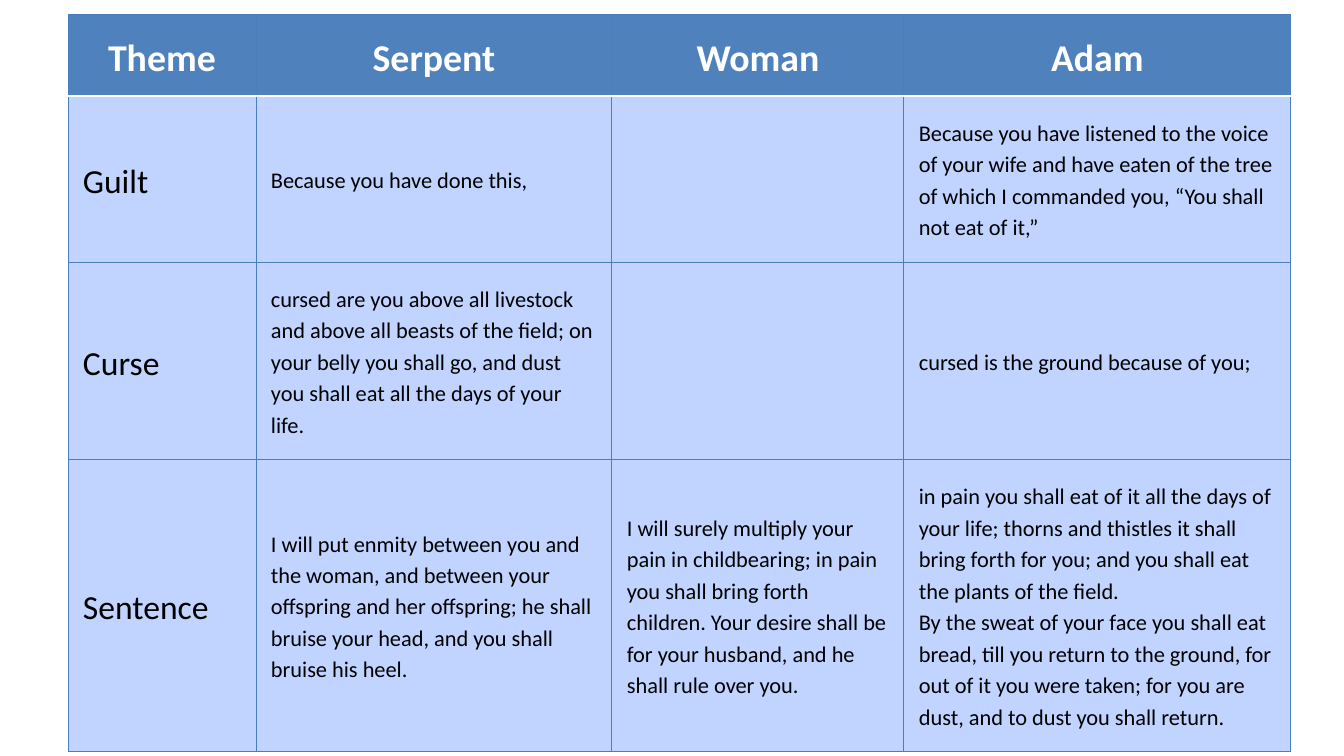
"""Build a slide with a table of guilt, curse and sentence for serpent, woman and Adam."""
from lxml import etree
from pptx import Presentation
from pptx import util as u
from pptx.dml.color import RGBColor
from pptx.enum import text
from pptx.oxml import ns

PX = 914400 / 100.8
BLUE = RGBColor(0x4F, 0x81, 0xBD)
PALE = RGBColor(0xC0, 0xD4, 0xFF)
EDGE = RGBColor(0x4B, 0x7E, 0xBC)
WHITE = RGBColor(0xFF, 0xFF, 0xFF)
BLACK = RGBColor(0, 0, 0)

COLS = [188, 356, 292, 387]
ROWS = [82, 166, 197, 292]
CELLS = [
    ["Theme", "Serpent", "Woman", "Adam"],
    ["Guilt", "Because you have done this,", "",
     "Because you have listened to the voice of your wife and have eaten of the tree "
     "of which I commanded you, “You shall not eat of it,”"],
    ["Curse",
     "cursed are you above all livestock and above all beasts of the field; "
     "on your belly you shall go, and dust you shall eat all the days of your life.",
     "", "cursed is the ground because of you;"],
    ["Sentence",
     "I will put enmity between you and the woman, and between your offspring "
     "and her offspring; he shall bruise your head, and you shall bruise his heel.",
     "I will surely multiply your pain in childbearing; in pain you shall bring forth "
     "children. Your desire shall be for your husband, and he shall rule over you.",
     "in pain you shall eat of it all the days of your life; thorns and thistles it "
     "shall bring forth for you; and you shall eat the plants of the field.\n"
     "By the sweat of your face you shall eat bread, till you return to the ground, "
     "for out of it you were taken; for you are dust, and to dust you shall return."],
]


def px(n):
    return u.Emu(round(n * PX))


def add_edge(cell, spot, side, color, width):
    line = etree.Element(ns.qn("a:ln" + side), w=str(u.Pt(width)))
    fill = etree.SubElement(line, ns.qn("a:solidFill"))
    etree.SubElement(fill, ns.qn("a:srgbClr"), val=str(color))
    cell._tc.get_or_add_tcPr().insert(spot, line)


prs = Presentation()
prs.slide_width, prs.slide_height = px(1344), px(756)
slide = prs.slides.add_slide(prs.slide_layouts[6])
table = slide.shapes.add_table(
    len(ROWS), len(COLS), px(68), px(14), px(sum(COLS)), px(sum(ROWS))).table
for col, width in zip(table.columns, COLS):
    col.width = px(width)
for row, height in zip(table.rows, ROWS):
    row.height = px(height)

for r, words in enumerate(CELLS):
    head = r == 0
    for c, word in enumerate(words):
        cell = table.cell(r, c)
        cell.fill.solid()
        cell.fill.fore_color.rgb = BLUE if head else PALE
        cell.vertical_anchor = text.MSO_ANCHOR.MIDDLE
        cell.margin_left = cell.margin_right = px(1 if head else 15)
        cell.margin_top = cell.margin_bottom = px(1 if head else 20)
        for spot, side in enumerate("LRTB"):
            rule = (r, side) in [(0, "B"), (1, "T")]
            add_edge(cell, spot, side, WHITE if rule else EDGE, 2 if rule else 0.75)
        if not word:
            continue
        para = cell.text_frame.paragraphs[0]
        para.alignment = text.PP_ALIGN.CENTER if head else text.PP_ALIGN.LEFT
        para.line_spacing = 1.15
        para.space_after = u.Pt(10)
        for n, part in enumerate(word.split("\n")):
            if n:
                para.add_line_break()
            run = para.add_run()
            run.text = part
            run.font.name = "Calibri"
            run.font.size = u.Pt(27 if head else 24 if c == 0 else 16)
            run.font.bold = head
            run.font.color.rgb = WHITE if head else BLACK

prs.save("out.pptx")
